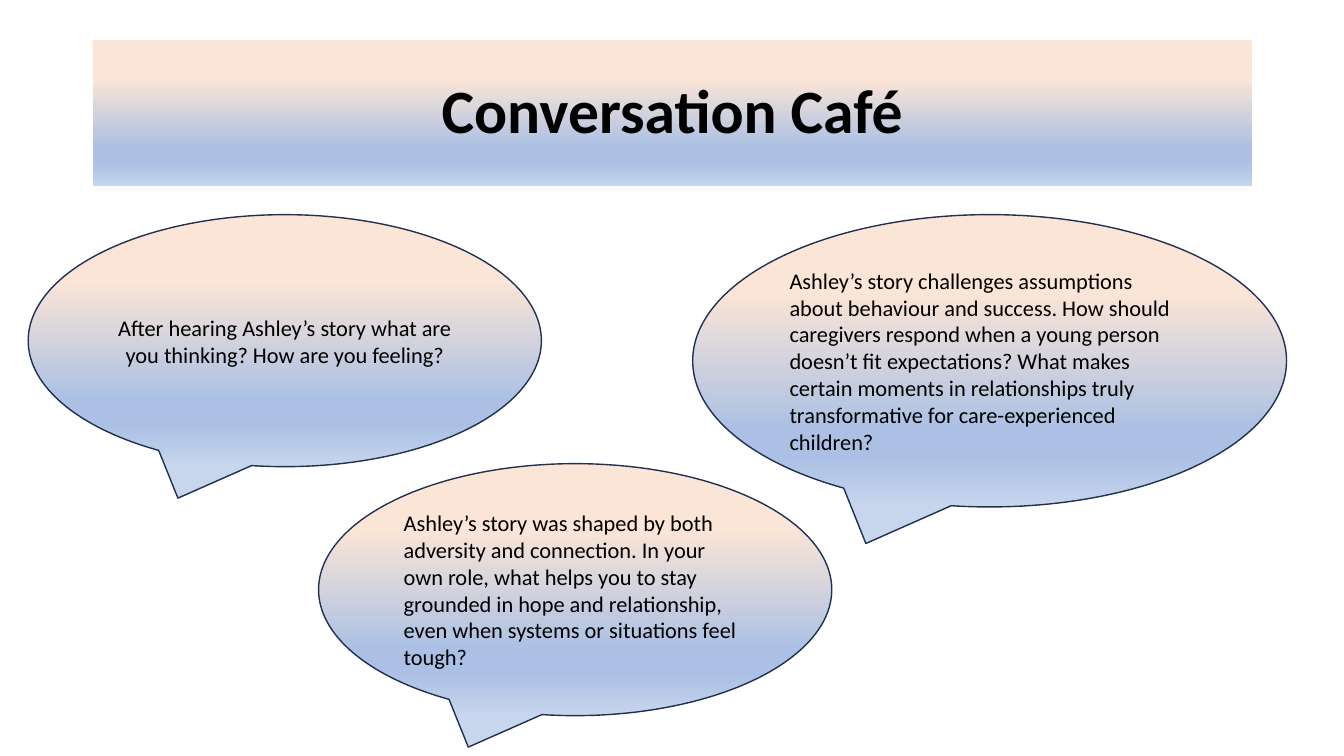
from lxml.etree import SubElement
from pptx import Presentation
from pptx.dml.color import RGBColor
from pptx.enum.shapes import MSO_SHAPE
from pptx.enum.text import MSO_ANCHOR, PP_ALIGN
from pptx.oxml.ns import qn
from pptx.util import Inches, Pt

BLACK = RGBColor(0x00, 0x00, 0x00)
NAVY = RGBColor(0x1E, 0x32, 0x56)
PEACH = RGBColor(0xFB, 0xE5, 0xD6)
BLUE = RGBColor(0xAB, 0xC0, 0xE4)
PALE_BLUE = RGBColor(0xC7, 0xD5, 0xED)
GRADIENT_STOPS = [(26, PEACH), (74, BLUE), (83, BLUE), (100, PALE_BLUE)]

BUBBLES = [
    (0.28, 2.13, 5.09, 2.5, PP_ALIGN.CENTER,
     "After hearing Ashley’s story what are you thinking? How are you feeling?"),
    (6.87, 2.13, 5.89, 2.9, PP_ALIGN.LEFT,
     "Ashley’s story challenges assumptions about behaviour and success. "
     "How should caregivers respond when a young person doesn’t fit expectations? "
     "What makes certain moments in relationships truly transformative for "
     "care-experienced children?"),
    (3.16, 4.6, 5.09, 2.5, PP_ALIGN.LEFT,
     "Ashley’s story was shaped by both adversity and connection. "
     "In your own role, what helps you to stay grounded in hope and relationship, "
     "even when systems or situations feel tough?"),
]


def fill_with_gradient(shape):
    shape.fill.gradient()
    shape.fill.gradient_angle = 270
    stop_list = shape.element.spPr.find(qn("a:gradFill")).find(qn("a:gsLst"))
    for stop in list(stop_list):
        stop_list.remove(stop)
    for percent, color in GRADIENT_STOPS:
        stop = SubElement(stop_list, qn("a:gs"), pos=str(percent * 1000))
        SubElement(stop, qn("a:srgbClr"), val=str(color))


def write_text(shape, text, size, alignment, bold=False):
    text_frame = shape.text_frame
    text_frame.text = text
    text_frame.word_wrap = True
    text_frame.vertical_anchor = MSO_ANCHOR.MIDDLE
    paragraph = text_frame.paragraphs[0]
    paragraph.alignment = alignment
    paragraph.font.name = "Calibri"
    paragraph.font.size = Pt(size)
    paragraph.font.bold = bold
    paragraph.font.color.rgb = BLACK
    return paragraph


def format_title(title):
    title.left, title.top = Inches(0.92), Inches(0.4)
    title.width, title.height = Inches(11.5), Inches(1.45)
    fill_with_gradient(title)
    paragraph = write_text(title, "Conversation Café", 44, PP_ALIGN.CENTER, bold=True)
    paragraph.line_spacing = 0.9


def add_bubble(slide, left, top, width, height, alignment, text):
    bubble = slide.shapes.add_shape(
        MSO_SHAPE.OVAL_CALLOUT, Inches(left), Inches(top), Inches(width), Inches(height))
    bubble.shadow.inherit = False
    fill_with_gradient(bubble)
    bubble.line.color.rgb = NAVY
    bubble.line.width = Pt(1)
    write_text(bubble, text, 16, alignment)


def main():
    presentation = Presentation()
    presentation.slide_width = Inches(13.33)
    presentation.slide_height = Inches(7.5)
    slide = presentation.slides.add_slide(presentation.slide_layouts[5])
    format_title(slide.shapes.title)
    for bubble in BUBBLES:
        add_bubble(slide, *bubble)
    presentation.save("out.pptx")


if __name__ == "__main__":
    main()
